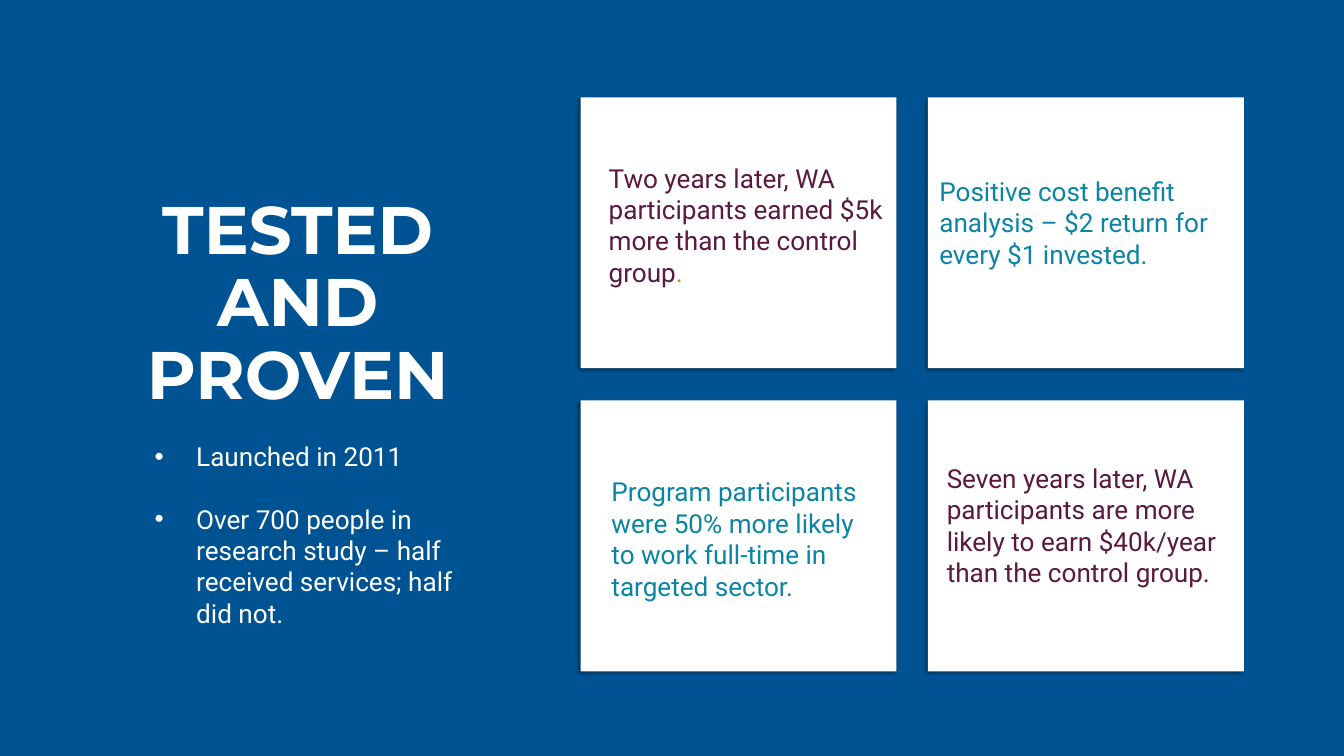
from lxml import etree
from pptx import Presentation
from pptx.dml.color import RGBColor
from pptx.enum.shapes import MSO_SHAPE
from pptx.enum.text import MSO_ANCHOR, MSO_AUTO_SIZE, PP_ALIGN
from pptx.oxml.ns import qn
from pptx.util import Emu, Inches, Pt

RECTANGLE = MSO_SHAPE.RECTANGLE
TOP = MSO_ANCHOR.TOP
NO_AUTOFIT = MSO_AUTO_SIZE.NONE
CENTER, LEFT = PP_ALIGN.CENTER, PP_ALIGN.LEFT

COLORS = {
    "blue": "005392",
    "white": "FFFFFF",
    "plum": "5A193D",
    "teal": "0C84A4",
    "orange": "EF7A24",
    "black": "000000",
}

HEADLINE = "TESTED AND PROVEN"
STUDY_FACTS = [
    "Launched in 2011",
    "Over 700 people in research study – half received services; half did not.",
]
FINDINGS = [
    {"cell": (0, 0), "offset": (0.32, 0.91), "size": (4.4, 1.99), "inset": (0.1, 0.05),
     "runs": [("Two years later, WA participants earned $5k more than the control group", "plum"),
              (".", "orange")]},
    {"cell": (1, 0), "offset": (0.07, 1.11), "size": (4.52, 1.52), "inset": (0.1, 0.05),
     "runs": [("Positive cost benefit analysis – $2 return for every $1 invested.", "teal")]},
    {"cell": (0, 1), "offset": (0.26, 1.02), "size": (4.2, 2.09), "inset": (0.2, 0.1),
     "runs": [("Program participants were 50% more likely to work full-time in targeted sector.", "teal")]},
    {"cell": (1, 1), "offset": (0.18, 0.87), "size": (4.48, 1.99), "inset": (0.1, 0.05),
     "runs": [("Seven years later, WA participants are more likely to earn $40k/year than the control group.", "plum")]},
]

GRID_LEFT, GRID_TOP = 8.64, 1.45
CARD_WIDTH, CARD_HEIGHT = 4.7, 4.03
COLUMN_STEP, ROW_STEP = 5.17, 4.51


def rgb(color):
    return RGBColor.from_string(COLORS[color])


def place(shape, left, top, width, height):
    shape.left, shape.top = Inches(left), Inches(top)
    shape.width, shape.height = Inches(width), Inches(height)


def set_frame(shape, inset):
    frame = shape.text_frame
    frame.word_wrap = True
    frame.auto_size = NO_AUTOFIT
    frame.vertical_anchor = TOP
    frame.margin_left = frame.margin_right = Inches(inset[0])
    frame.margin_top = frame.margin_bottom = Inches(inset[1])
    return frame


def add_run(paragraph, text, color, size=28, font="Roboto", bold=False):
    run = paragraph.add_run()
    run.text = text
    run.font.name = font
    run.font.size = Pt(size)
    run.font.bold = bold
    run.font.color.rgb = rgb(color)


def add_panel(slide, left, top, width, height, color):
    panel = slide.shapes.add_shape(RECTANGLE, left, top, width, height)
    panel.fill.solid()
    panel.fill.fore_color.rgb = rgb(color)
    panel.line.fill.background()
    panel.shadow.inherit = False
    return panel


def add_card_shadow(card):
    effects = card.element.spPr.find(qn("a:effectLst"))
    shadow = etree.SubElement(effects, qn("a:outerShdw"), blurRad=str(Pt(4)),
                              dist=str(Pt(3)), dir=str(135 * 60000),
                              algn="tr", rotWithShape="0")
    tint = etree.SubElement(shadow, qn("a:srgbClr"), val=COLORS["black"])
    etree.SubElement(tint, qn("a:alpha"), val="40000")


def add_bullet(paragraph, indent):
    properties = paragraph._p.get_or_add_pPr()
    properties.set("marL", str(Inches(indent)))
    properties.set("indent", str(-Inches(indent)))
    etree.SubElement(properties, qn("a:buFont"), typeface="Arial")
    etree.SubElement(properties, qn("a:buChar"), char="•")


def main():
    deck = Presentation()
    deck.slide_width, deck.slide_height = Inches(20), Inches(11.25)
    slide = deck.slides.add_slide(deck.slide_layouts[1])
    headline, facts = slide.shapes.title, slide.placeholders[1]

    backdrop = add_panel(slide, Emu(0), Emu(0), deck.slide_width, deck.slide_height, "blue")
    headline.element.addprevious(backdrop.element)

    place(headline, 1.97, 2.85, 4.92, 3)
    paragraph = set_frame(headline, (0.15, 0.07)).paragraphs[0]
    paragraph.alignment = CENTER
    paragraph.line_spacing = 0.9
    add_run(paragraph, HEADLINE, "white", 72, "Montserrat", True)

    place(facts, 2.2, 6.51, 4.7, 2.93)
    frame = set_frame(facts, (0.1, 0.05))
    for index, fact in enumerate(STUDY_FACTS):
        paragraph = frame.add_paragraph() if index else frame.paragraphs[0]
        add_bullet(paragraph, 0.62)
        paragraph.alignment = LEFT
        paragraph.space_before = Pt(33 if index else 0)
        add_run(paragraph, fact, "white")

    for finding in FINDINGS:
        column, row = finding["cell"]
        left = GRID_LEFT + column * COLUMN_STEP
        top = GRID_TOP + row * ROW_STEP
        card = add_panel(slide, Inches(left), Inches(top),
                         Inches(CARD_WIDTH), Inches(CARD_HEIGHT), "white")
        add_card_shadow(card)

        dx, dy = finding["offset"]
        width, height = finding["size"]
        note = slide.shapes.add_textbox(Inches(left + dx), Inches(top + dy),
                                        Inches(width), Inches(height))
        paragraph = set_frame(note, finding["inset"]).paragraphs[0]
        for text, color in finding["runs"]:
            add_run(paragraph, text, color)

    deck.save("out.pptx")


if __name__ == "__main__":
    main()
